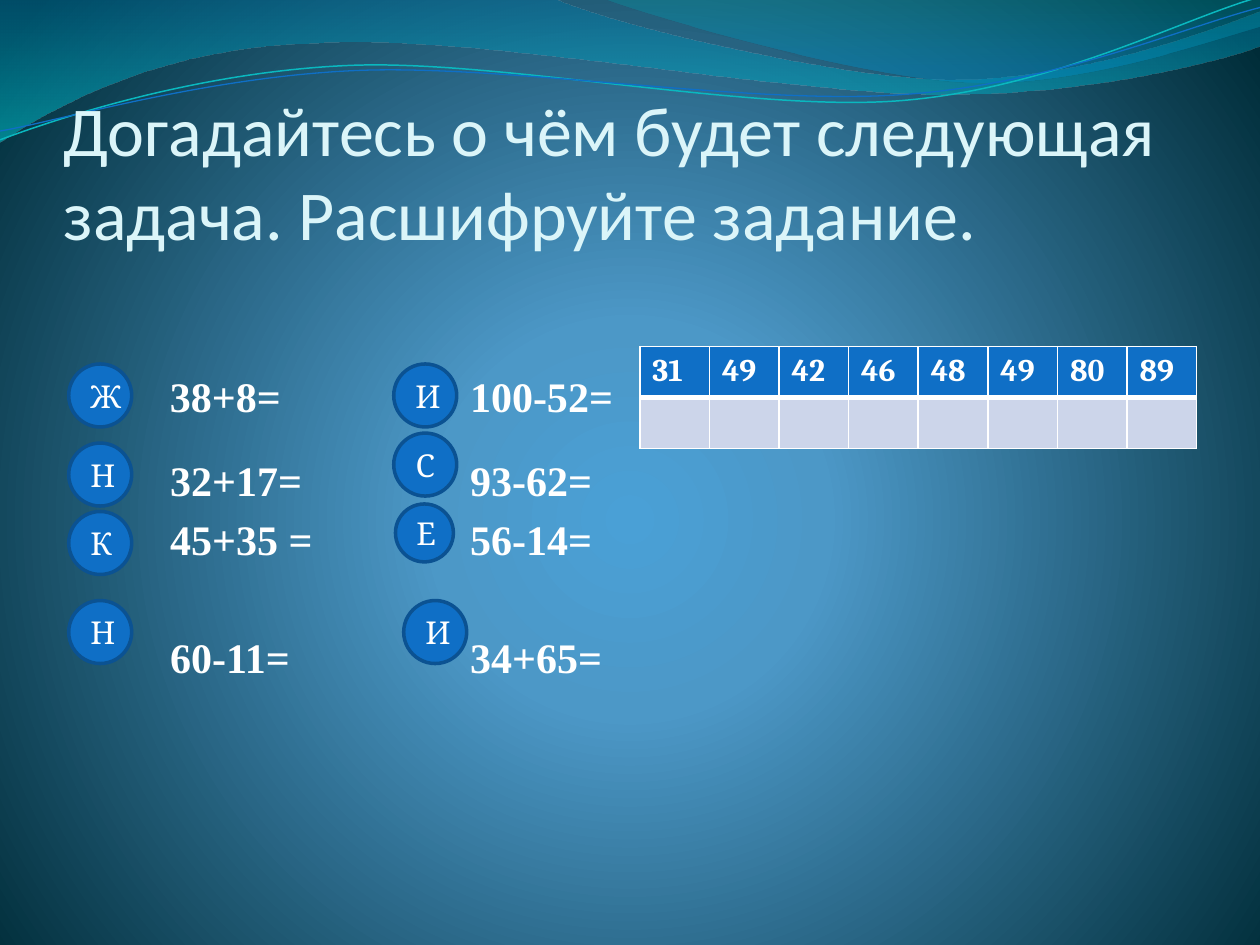
import math

from lxml import etree
from pptx import Presentation
from pptx import util as u
from pptx.dml.color import RGBColor
from pptx.enum import shapes, text
from pptx.oxml.ns import qn

Pt = u.Pt

# Content
TITLE = "Догадайтесь о чём будет следующая задача. Расшифруйте задание."
FIRST_ROW = [("38+8=", "100-52=", 0)]
OTHER_ROWS = [  # left sum, right sum, space before
    ("32+17=", "93-62=", 0),
    ("45+35 =", "56-14=", 4.9),
    ("60-11=", "34+65=", 38.6),
]
CODES = ["31", "49", "42", "46", "48", "49", "80", "89"]
LETTERS = [  # letter, left, top, diameter
    ("Ж", 39.3, 208, 36), ("Н", 39.3, 253.2, 36),
    ("К", 39.3, 292.3, 36), ("Н", 39.3, 343.2, 36),
    ("И", 225, 208, 36), ("С", 225, 247.5, 36),
    ("Е", 226, 288, 33.1), ("И", 230.7, 343.2, 36),
]

THEME = {
    "title_font": "Calibri", "sum_font": "Times New Roman", "letter_font": "Cambria",
    "title_size": 40, "sum_size": 24, "letter_size": 18,
    "title": "DBF5F9", "white": "FFFFFF", "blue": "0F6FC6",
    "outline": "0B5292", "pale": "CCD5EA", "cyan": "0AB8BF",
    # stops: position, colour, opacity (all but colour in percent)
    "background": [(0, "4AA0D6", 100), (25, "4C98C7", 100), (100, "002C38", 100)],
    "wide_wave": [(0, "0074A1", 45), (100, "00C6CF", 55)],
    "right_wave": [(0, "00A1A9", 30), (80, "008BBF", 45)],
}

# Waves: a pair is a straight step, six numbers are a cubic curve
WIDE_WAVE = [
    (0, 0), (316.8, -0.7), (342.7, 12.2, 478.1, 45.4, 545.8, 45.4),
    (614.2, 45.4, 689.8, 18.7, 720, 6.5), (720.7, 25.9),
    (707.8, 31.7, 626.4, 54.7, 537.1, 54), (447.8, 54, 275, 20.2, 185, 24.5),
    (92.9, 25.9, 33.1, 59.8, -0.7, 81.4), (0, 0),
]
RIGHT_WAVE = [
    (344.9, -0.7), (366.5, 7.9, 491, 44.6, 553.7, 46.8),
    (616.3, 49.7, 691.9, 23, 720, 15.1), (720, 0), (344.9, -0.7),
]
CYAN_LINE = [
    (0, 79.9), (34.6, 67, 113.8, 41, 199.4, 37.4),
    (284.4, 33.8, 427, 64.1, 513.4, 57.6), (599.8, 51.1, 675.4, 10.8, 718.6, -1.4),
]
BLUE_LINE = [
    (0, 74.9), (33.8, 69.1, 118.1, 43.9, 203.8, 40.3),
    (290.2, 36.7, 429.8, 60.5, 516.2, 54), (601.9, 48.2, 677.5, 15.1, 720, 4.3),
]
LINE_TILT = -2.7  # degrees
LINE_CENTER = (359.5, 42)
SECOND_COLUMN = 171.5  # distance between the two columns of sums


def color(name):
    return RGBColor.from_string(THEME[name])


def set_gradient(fill, element, stops, circle=False):
    fill.gradient()
    gradient = element.find(".//" + qn("a:gradFill"))
    for child in list(gradient):
        gradient.remove(child)
    stop_list = etree.SubElement(gradient, qn("a:gsLst"))
    for position, value, opacity in stops:
        stop = etree.SubElement(stop_list, qn("a:gs"), pos=str(position * 1000))
        tone = etree.SubElement(stop, qn("a:srgbClr"), val=value)
        if opacity < 100:
            etree.SubElement(tone, qn("a:alpha"), val=str(opacity * 1000))
    if circle:
        shade = etree.SubElement(gradient, qn("a:path"), path="circle")
        etree.SubElement(shade, qn("a:fillToRect"), l="10000", t="110000", r="10000", b="100000")
    else:
        etree.SubElement(gradient, qn("a:lin"), ang="5400000", scaled="1")


def untilt(x, y, tilt):
    """Position of a point before its shape is turned by tilt degrees."""
    angle = math.radians(-tilt)
    dx, dy = x - LINE_CENTER[0], y - LINE_CENTER[1]
    return (Pt(LINE_CENTER[0] + dx * math.cos(angle) - dy * math.sin(angle)),
            Pt(LINE_CENTER[1] + dx * math.sin(angle) + dy * math.cos(angle)))


def add_wave(slide, steps, stops=None, line=None, width=0, tilt=0):
    moves = [[untilt(*step[i:i + 2], tilt) for i in range(0, len(step), 2)] for step in steps]
    builder = slide.shapes.build_freeform(*moves[0][-1])
    builder.add_line_segments([move[-1] for move in moves[1:]], close=stops is not None)
    shape = builder.convert_to_shape()
    # Turn the straight segments of the curved steps into cubic curves
    segments = list(shape.element.iter(qn("a:lnTo")))
    for segment, move in zip(segments, moves[1:]):
        if len(move) == 3:
            curve = etree.Element(qn("a:cubicBezTo"))
            for x, y in move:
                etree.SubElement(curve, qn("a:pt"), x=str(x - shape.left), y=str(y - shape.top))
            segment.getparent().replace(segment, curve)
    shape.rotation = tilt
    shape.shadow.inherit = False
    if stops:
        set_gradient(shape.fill, shape.element, stops)
        shape.line.fill.background()
    else:
        shape.fill.background()
        shape.line.color.rgb = color(line)
        shape.line.width = Pt(width)


def add_run(paragraph, words, font, size, tone, bold=False):
    run = paragraph.add_run()
    run.text = words
    run.font.name, run.font.size, run.font.bold = THEME[font], Pt(THEME[size]), bold
    run.font.color.rgb = color(tone)


def add_box(slide, place, insets):
    frame = slide.shapes.add_textbox(*map(Pt, place)).text_frame
    frame.word_wrap = True
    frame.margin_left, frame.margin_top, frame.margin_right, frame.margin_bottom = map(Pt, insets)
    return frame


def add_sums(slide, rows, place, insets):
    frame = add_box(slide, place, insets)
    for index, (left, right, gap) in enumerate(rows):
        paragraph = frame.add_paragraph() if index else frame.paragraphs[0]
        paragraph.space_before = Pt(gap)
        tabs = etree.SubElement(paragraph._p.get_or_add_pPr(), qn("a:tabLst"))
        etree.SubElement(tabs, qn("a:tab"), pos=str(Pt(SECOND_COLUMN)), algn="l")
        add_run(paragraph, left + "\t" + right, "sum_font", "sum_size", "white", True)


def set_borders(cell, widths):
    properties = cell._tc.get_or_add_tcPr()
    for index, (side, width) in enumerate(zip("LRTB", widths)):
        line = etree.Element(qn("a:ln" + side), w=str(Pt(width)))
        solid = etree.SubElement(line, qn("a:solidFill"))
        etree.SubElement(solid, qn("a:srgbClr"), val=THEME["white"])
        properties.insert(index, line)


def add_code_table(slide):
    table = slide.shapes.add_table(2, len(CODES), Pt(365.6), Pt(198), Pt(318.2), Pt(58.4)).table
    for column, code in enumerate(CODES):
        header, answer = table.cell(0, column), table.cell(1, column)
        add_run(header.text_frame.paragraphs[0], code, "letter_font", "letter_size", "white", True)
        for cell, tone, widths in ((header, "blue", (1, 1, 1, 3)), (answer, "pale", (1, 1, 3, 1))):
            cell.fill.solid()
            cell.fill.fore_color.rgb = color(tone)
            set_borders(cell, widths)


def add_letter(slide, letter, left, top, size):
    shape = slide.shapes.add_shape(shapes.MSO_SHAPE.FLOWCHART_CONNECTOR,
                                   Pt(left), Pt(top), Pt(size), Pt(size))
    shape.shadow.inherit = False
    shape.fill.solid()
    shape.fill.fore_color.rgb = color("blue")
    shape.line.color.rgb = color("outline")
    shape.line.width = Pt(2)
    frame = shape.text_frame
    frame.vertical_anchor = text.MSO_ANCHOR.MIDDLE
    frame.paragraphs[0].alignment = text.PP_ALIGN.CENTER
    add_run(frame.paragraphs[0], letter, "letter_font", "letter_size", "white")


def main():
    presentation = Presentation()
    presentation.slide_width, presentation.slide_height = Pt(720), Pt(540)
    slide = presentation.slides.add_slide(presentation.slide_layouts[6])

    # Background and waves
    set_gradient(slide.background.fill, slide.element, THEME["background"], circle=True)
    add_wave(slide, WIDE_WAVE, THEME["wide_wave"])
    add_wave(slide, RIGHT_WAVE, THEME["right_wave"])
    add_wave(slide, CYAN_LINE, line="cyan", width=0.85, tilt=LINE_TILT)
    add_wave(slide, BLUE_LINE, line="blue", width=0.75, tilt=LINE_TILT)

    # Title
    title = add_box(slide, (36.3, 55.4, 648, 90), (0, 3.6, 0, 0))
    title.vertical_anchor = text.MSO_ANCHOR.BOTTOM
    add_run(title.paragraphs[0], TITLE, "title_font", "title_size", "title")

    # Sums, table of codes and letters
    add_sums(slide, OTHER_ROWS, (36, 198, 318.2, 303), (61.2, 61.7, 7.2, 3.6))
    add_code_table(slide)
    add_sums(slide, FIRST_ROW, (90, 208, 270, 36), (7.2, 3.6, 7.2, 3.6))
    for letter in LETTERS:
        add_letter(slide, *letter)

    presentation.save("out.pptx")


if __name__ == "__main__":
    main()
